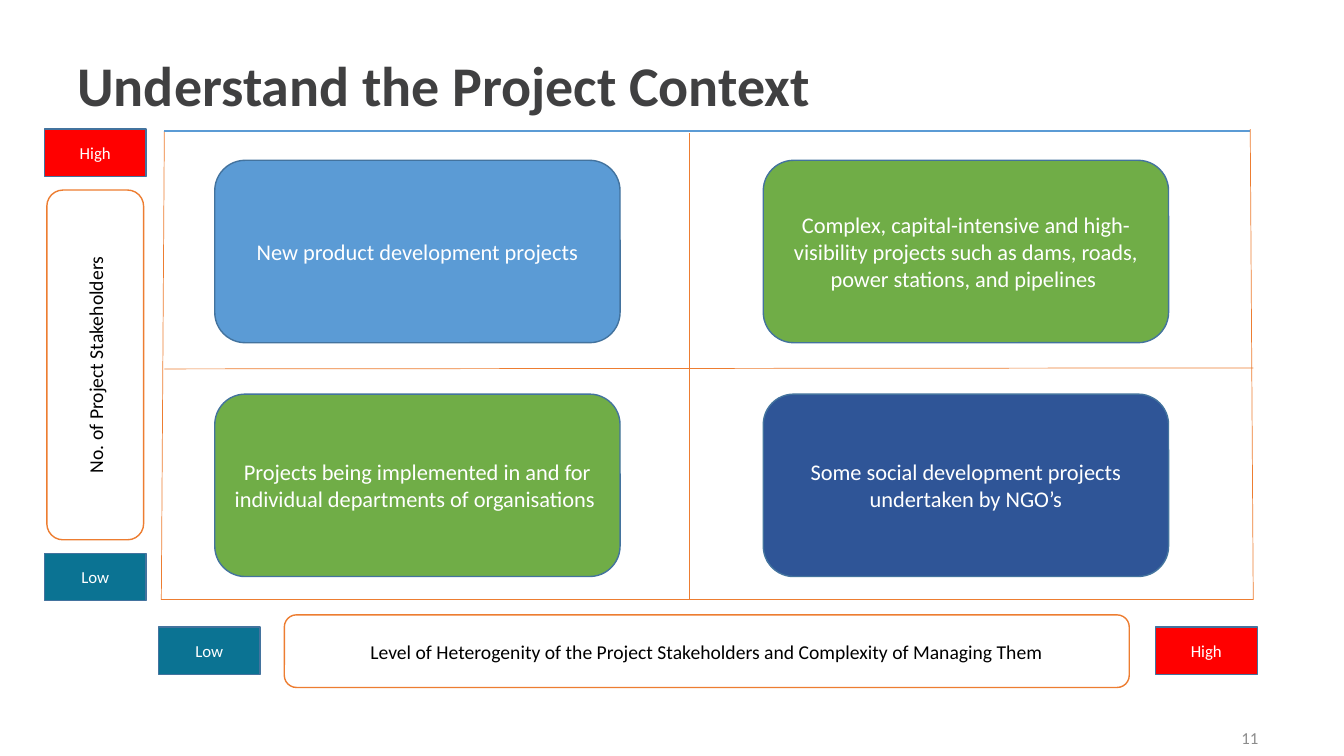
from dataclasses import dataclass

from lxml import etree
from pptx import Presentation
from pptx.dml.color import RGBColor
from pptx.enum.shapes import MSO_CONNECTOR as Connector, MSO_SHAPE as Shape
from pptx.enum.text import MSO_ANCHOR as Anchor, PP_ALIGN as Align
from pptx.oxml.ns import qn
from pptx.util import Inches, Pt


@dataclass(frozen=True)
class Theme:
    font: str = "Calibri"
    title: str = "404041"
    number: str = "8C8C8C"
    black: str = "000000"
    white: str = "FFFFFF"
    orange: str = "ED7D31"
    blue: str = "5B9BD5"
    green: str = "70AD47"
    navy: str = "2F5597"
    outline: str = "43739E"
    high: str = "FF0000"
    low: str = "0B7393"
    title_size: int = 40
    card_size: int = 16
    axis_size: int = 14
    small_size: int = 12


THEME = Theme()
LEVELS = {"High": THEME.high, "Low": THEME.low}
CARDS = [
    [("New product development projects", THEME.blue),
     ("Complex, capital-intensive and high-visibility projects such as dams, "
      "roads, power stations, and pipelines ", THEME.green)],
    [("Projects being implemented in and for individual departments of "
      "organisations ", THEME.green),
     ("Some social development projects undertaken by NGO’s", THEME.navy)],
]


def color(value):
    return RGBColor.from_string(value)


def write(shape, text, size, ink, align=Align.CENTER, bold=False):
    frame = shape.text_frame
    frame.word_wrap = True
    frame.vertical_anchor = Anchor.MIDDLE
    paragraph = frame.paragraphs[0]
    paragraph.alignment = align
    run = paragraph.add_run()
    run.text = text
    run.font.name = THEME.font
    run.font.size = Pt(size)
    run.font.bold = bold
    run.font.color.rgb = color(ink)
    return paragraph


def add_text(slide, box, *args, **options):
    shape = slide.shapes.add_textbox(*map(Inches, box))
    return write(shape, *args, **options)


def add_block(slide, kind, box, text, size, fill, line, ink=THEME.white):
    shape = slide.shapes.add_shape(kind, *map(Inches, box))
    shape.shadow.inherit = False
    shape.fill.solid()
    shape.fill.fore_color.rgb = color(fill)
    shape.line.color.rgb = color(line)
    shape.line.width = Pt(1)
    write(shape, text, size, ink)
    return shape


def add_line(slide, start, end, ink=THEME.orange, width=0.5):
    line = slide.shapes.add_connector(
        Connector.STRAIGHT, *map(Inches, (*start, *end)))
    line.line.color.rgb = color(ink)
    line.line.width = Pt(width)
    etree.SubElement(line._element.spPr, qn("a:effectLst"))


def add_level(slide, left, top, level):
    add_block(slide, Shape.RECTANGLE, (left, top, 1.01, 0.47), level,
              THEME.small_size, LEVELS[level], THEME.outline)


def add_axis(slide, box, text):
    return add_block(slide, Shape.ROUNDED_RECTANGLE, box, text, THEME.axis_size,
                     THEME.white, THEME.orange, THEME.black)


def add_matrix(slide, left, top, width, height):
    right, bottom = left + width, top + height
    middle_x, middle_y = left + 5.24, top + 2.36

    # Frame and dividers, hand-drawn slightly off square
    add_line(slide, (left + 0.03, top), (left, bottom))
    add_line(slide, (left, bottom), (right, bottom))
    add_line(slide, (left + 0.03, middle_y), (right, middle_y - 0.01))
    add_line(slide, (middle_x, top + 0.02), (middle_x, bottom))
    add_line(slide, (left + 0.03, top), (right - 0.03, top), THEME.blue, 1)
    add_line(slide, (right - 0.03, top - 0.02), (right, bottom))

    # Project types, one per quadrant
    for row, cards in enumerate(CARDS):
        for column, (text, fill) in enumerate(cards):
            box = (left + 0.53 + column * 5.44, top + 0.29 + row * 2.32, 4.02, 1.81)
            add_block(slide, Shape.ROUNDED_RECTANGLE, box, text,
                      THEME.card_size, fill, THEME.outline)


def add_vertical_axis(slide, left, top, width, height):
    # The label is laid out flat around the strip's centre, then turned
    length, depth = 3.47, 0.96
    box = (left + (width - length) / 2, top + (height - length) / 2 + (length - depth) / 2,
           length, depth)
    add_axis(slide, box, "No. of Project Stakeholders").rotation = 270
    add_level(slide, left, top, "High")
    add_level(slide, left, top + height - 0.47, "Low")


def add_horizontal_axis(slide, left, top, width, height):
    add_axis(slide, (left + 1.25, top, 8.38, height),
             "Level of Heterogenity of the Project Stakeholders and "
             "Complexity of Managing Them")
    add_level(slide, left, top + 0.12, "Low")
    add_level(slide, left + width - 1.01, top + 0.12, "High")


def add_heading(slide, left, top, width, height):
    paragraph = add_text(slide, (left, top, width, height),
                         "Understand the Project Context", THEME.title_size,
                         THEME.title, align=Align.LEFT, bold=True)
    paragraph.line_spacing = 0.9


def add_page_number(slide, left, top, width, height):
    add_text(slide, (left, top, width, height), "11", THEME.small_size,
             THEME.number, align=Align.RIGHT)


def main():
    presentation = Presentation()
    presentation.slide_width = Inches(13.33)
    presentation.slide_height = Inches(7.5)
    slide = presentation.slides.add_slide(presentation.slide_layouts[6])
    add_heading(slide, 0.67, 0.52, 12, 0.71)
    add_matrix(slide, 1.6, 1.3, 10.83, 4.65)
    add_vertical_axis(slide, 0.44, 1.28, 1.01, 4.68)
    add_horizontal_axis(slide, 1.57, 6.1, 10.9, 0.72)
    add_page_number(slide, 9.58, 7.12, 3, 0.4)
    presentation.save("out.pptx")


if __name__ == "__main__":
    main()
